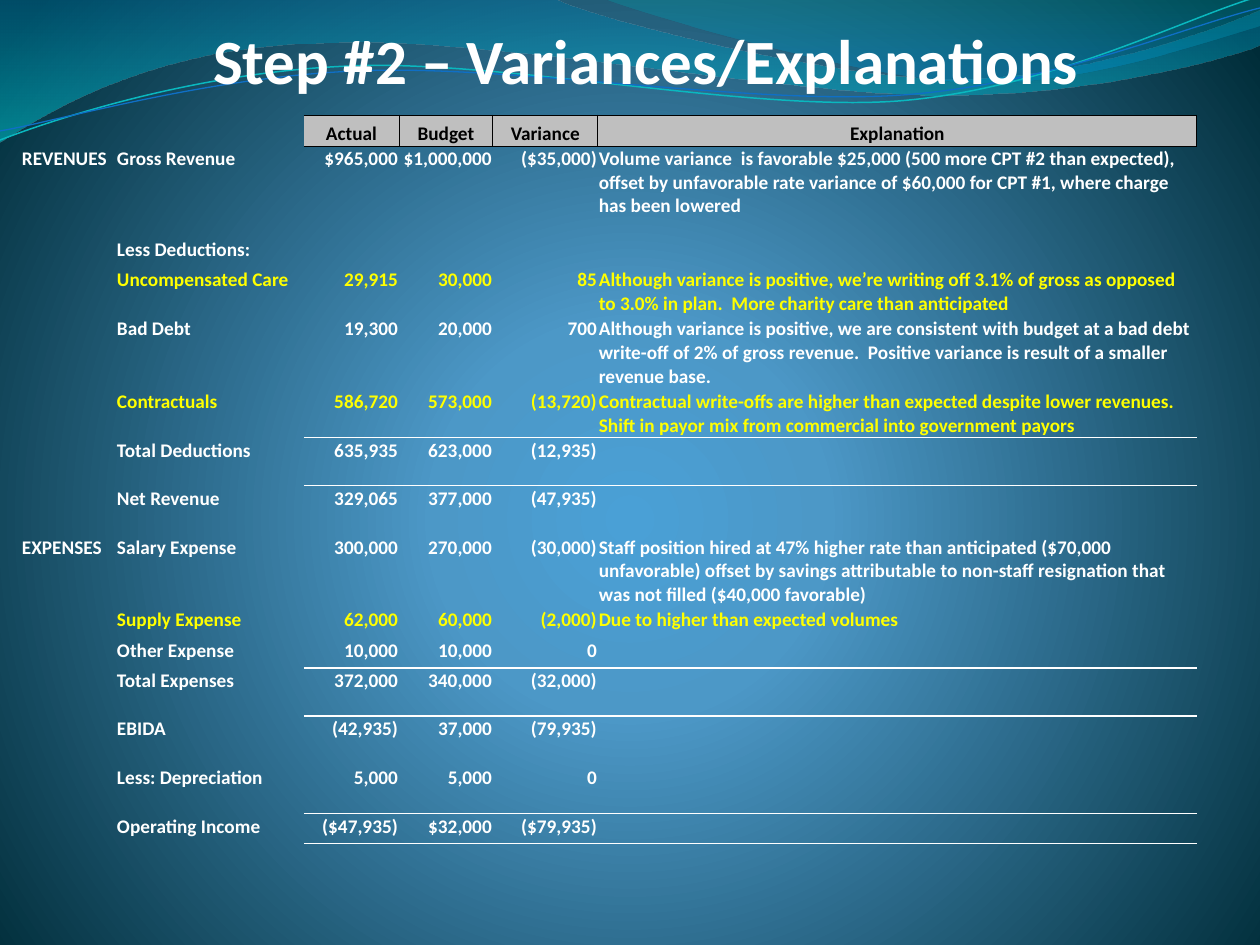
import lxml.etree
import pptx
import pptx.dml.color
import pptx.enum.text
import pptx.oxml
import pptx.oxml.ns
import pptx.util

RGB = pptx.dml.color.RGBColor
ALIGN = pptx.enum.text.PP_ALIGN
ANCHOR = pptx.enum.text.MSO_ANCHOR
qn = pptx.oxml.ns.qn

WHITE = RGB(0xFF, 0xFF, 0xFF)
BLACK = RGB(0x00, 0x00, 0x00)
YELLOW = RGB(0xFF, 0xFF, 0x00)
GREY = RGB(0xBF, 0xBF, 0xBF)
AQUA = RGB(0x0A, 0xB8, 0xBF)
BLUE = RGB(0x0F, 0x6F, 0xC6)

FONT = "Calibri"
SCALE = 914400 / 126  # EMU per px
NO_GRID_STYLE = "{2D5ABB26-0587-4C30-8999-92F81FD0307C}"

DOWNWARD = '<a:lin ang="5400000" scaled="0"/>'
CIRCULAR = ('<a:path path="circle"><a:fillToRect l="10000" t="110000" '
            'r="10000" b="100000"/></a:path>')

# Outlines in px: a pair is a straight step, three pairs are a curve
BROAD_WAVE = [
    (0, 0), (554, -1), ((600, 21), (837, 79), (955, 79)),
    ((1075, 79), (1207, 33), (1260, 11)), (1261, 45),
    ((1239, 55), (1096, 96), (940, 95)), ((784, 95), (481, 35), (324, 43)),
    ((163, 45), (58, 105), (-1, 142))]
RIGHT_WAVE = [
    (604, -1), ((641, 14), (859, 78), (969, 82)),
    ((1079, 87), (1211, 40), (1260, 26)), (1260, 0)]
AQUA_LINE = [
    (0, 140), ((60, 117), (199, 72), (349, 66)),
    ((498, 59), (747, 112), (898, 101)), ((1050, 89), (1182, 19), (1257, -3))]
BLUE_LINE = [
    (0, 131), ((59, 121), (207, 77), (357, 71)),
    ((508, 64), (752, 106), (903, 95)), ((1053, 84), (1186, 26), (1260, 8))]

COLUMNS = [95, 188, 95, 94, 105, 599]
SPACER = (19, WHITE, [""] * 6)
LOW_SPACER = (18, WHITE, [""] * 6)
# Height, text colour, cells
ROWS = [
    (31, BLACK, ["", "", "Actual", "Budget", "Variance", "Explanation"]),
    (72, WHITE, ["REVENUES", "Gross Revenue", "$965,000", "$1,000,000", "($35,000)",
                 "Volume variance  is favorable $25,000 (500 more CPT #2 than expected), "
                 "offset by unfavorable rate variance of $60,000 for CPT #1, where charge "
                 "has been lowered"]),
    SPACER,
    (30, WHITE, ["", "Less Deductions:", "", "", "", ""]),
    (49, YELLOW, ["", "Uncompensated Care", "29,915", "30,000", "85",
                  "Although variance is positive, we’re writing off 3.1% of gross as "
                  "opposed to 3.0% in plan.  More charity care than anticipated"]),
    (73, WHITE, ["", "Bad Debt", "19,300", "20,000", "700",
                 "Although variance is positive, we are consistent with budget at a bad "
                 "debt write-off of 2% of gross revenue.  Positive variance is result of a "
                 "smaller revenue base."]),
    (48, YELLOW, ["", "Contractuals", "586,720", "573,000", "(13,720)",
                  "Contractual write-offs are higher than expected despite lower revenues.  "
                  "Shift in payor mix from commercial into government payors"]),
    (30, WHITE, ["", "Total Deductions", "635,935", "623,000", "(12,935)", ""]),
    LOW_SPACER,
    (30, WHITE, ["", "Net Revenue", "329,065", "377,000", "(47,935)", ""]),
    SPACER,
    (72, WHITE, ["EXPENSES", "Salary Expense", "300,000", "270,000", "(30,000)",
                 "Staff position hired at 47% higher rate than anticipated ($70,000 "
                 "unfavorable) offset by savings attributable to non-staff resignation that "
                 "was not filled ($40,000 favorable)"]),
    (31, YELLOW, ["", "Supply Expense", "62,000", "60,000", "(2,000)",
                  "Due to higher than expected volumes"]),
    (30, WHITE, ["", "Other Expense", "10,000", "10,000", "0", ""]),
    (30, WHITE, ["", "Total Expenses", "372,000", "340,000", "(32,000)", ""]),
    LOW_SPACER,
    (30, WHITE, ["", "EBIDA", "(42,935)", "37,000", "(79,935)", ""]),
    SPACER,
    (30, WHITE, ["", "Less: Depreciation", "5,000", "5,000", "0", ""]),
    SPACER,
    (30, WHITE, ["", "Operating Income", "($47,935)", "$32,000", "($79,935)", ""]),
]
RULED_ROWS = {6, 8, 13, 15, 19, 20}  # rows with a white rule below


def px(length):
    return pptx.util.Emu(round(length * SCALE))


def gradient(stops, direction):
    """Gradient fill element from (position, colour, opacity) stops in percent."""
    marks = "".join(
        f'<a:gs pos="{position * 1000}"><a:srgbClr val="{colour}">'
        f'<a:alpha val="{opacity * 1000}"/></a:srgbClr></a:gs>'
        for position, colour, opacity in stops)
    return pptx.oxml.parse_xml(
        f'<a:gradFill {pptx.oxml.ns.nsdecls("a")} rotWithShape="1">'
        f'<a:gsLst>{marks}</a:gsLst>{direction}</a:gradFill>')


def replace_solid(fill, parent, stops, direction):
    fill.solid()
    parent.replace(parent.find(qn("a:solidFill")), gradient(stops, direction))


def add_outline(page, outline, closed):
    """Freeform through the end of each step, with curved steps bent afterwards."""
    ends = [part[-1] if isinstance(part[0], tuple) else part for part in outline]
    start, *others = [(px(x), px(y)) for x, y in ends]
    builder = page.shapes.build_freeform(*start)
    builder.add_line_segments(others, close=closed)
    shape = builder.convert_to_shape()
    shape.shadow.inherit = False
    segments = list(shape.element.iter(qn("a:lnTo")))
    for segment, part in zip(segments, outline[1:]):
        if isinstance(part[0], tuple):
            curve = lxml.etree.Element(qn("a:cubicBezTo"))
            for x, y in part:
                lxml.etree.SubElement(curve, qn("a:pt"), x=str(px(x) - shape.left),
                                      y=str(px(y) - shape.top))
            segment.getparent().replace(segment, curve)
    return shape


def add_wave(page, outline, stops):
    shape = add_outline(page, outline, True)
    shape.line.fill.background()
    replace_solid(shape.fill, shape.element.spPr, stops, DOWNWARD)


def add_swoosh(page, outline, colour, width):
    shape = add_outline(page, outline, False)
    shape.fill.background()
    shape.line.color.rgb = colour
    shape.line.width = pptx.util.Pt(width)


def write(frame, text, size=11, colour=WHITE, align=ALIGN.LEFT):
    para = frame.paragraphs[0]
    para.alignment = align
    span = para.add_run()
    span.text = text
    span.font.name, span.font.size, span.font.bold = FONT, pptx.util.Pt(size), True
    span.font.color.rgb = colour


def add_title(page, text):
    title = page.shapes.title
    title.left, title.top, title.width, title.height = map(px, (-144, -32, 1582, 129))
    frame = title.text_frame
    frame.auto_size = pptx.enum.text.MSO_AUTO_SIZE.NONE
    frame.vertical_anchor = ANCHOR.BOTTOM
    frame.margin_left = frame.margin_top = frame.margin_bottom = 0
    frame.margin_right = px(2)
    write(frame, text, size=36, align=ALIGN.CENTER)
    title.element.getparent().append(title.element)  # in front of the waves


def add_border(cell, side, rule):
    properties = cell._tc.get_or_add_tcPr()
    line = lxml.etree.SubElement(properties, qn(f"a:ln{side}"))
    if rule is None:
        lxml.etree.SubElement(line, qn("a:noFill"))
        return
    colour, width = rule
    line.set("w", str(pptx.util.Pt(width)))
    solid = lxml.etree.SubElement(line, qn("a:solidFill"))
    lxml.etree.SubElement(solid, qn("a:srgbClr"), val=str(colour))


def rule_cell(cell, row, column):
    """Black frame round the header, white rules under the ruled rows."""
    frame, rule = (BLACK, 0.5), (WHITE, 1)
    rules = {}
    if column >= 2:
        if row == 0:
            rules = dict.fromkeys("RTB" if column == 2 else "LRTB", frame)
        if row == 1:
            rules["T"] = frame
        if row - 1 in RULED_ROWS:
            rules["T"] = rule
        if row in RULED_ROWS:
            rules["B"] = rule
    for side in "LRTB":
        add_border(cell, side, rules.get(side))


def fill_cell(cell, text, row, column, colour):
    cell.margin_left = cell.margin_right = cell.margin_top = px(1)
    cell.margin_bottom = 0
    cell.vertical_anchor = ANCHOR.TOP if row else ANCHOR.BOTTOM
    rule_cell(cell, row, column)
    if row == 0 and column >= 2:
        cell.fill.solid()
        cell.fill.fore_color.rgb = GREY
    else:
        cell.fill.background()
    if text:
        align = ALIGN.RIGHT if column in (2, 3, 4) else ALIGN.LEFT
        write(cell.text_frame, text, colour=colour, align=align if row else ALIGN.CENTER)
    else:  # small type keeps the spacer rows low
        lxml.etree.SubElement(cell.text_frame.paragraphs[0]._p, qn("a:endParaRPr"), sz="600")


def add_variance_table(page):
    heights = [height for height, _, _ in ROWS]
    frame = page.shapes.add_table(len(ROWS), len(COLUMNS), px(21), px(115),
                                  px(sum(COLUMNS)), px(sum(heights)))
    table = frame.table
    table.first_row = table.horz_banding = False
    table._tbl.tblPr.find(qn("a:tableStyleId")).text = NO_GRID_STYLE
    for column, width in zip(table.columns, COLUMNS):
        column.width = px(width)
    for row, (height, colour, texts) in enumerate(ROWS):
        table.rows[row].height = px(height)
        for column, text in enumerate(texts):
            fill_cell(table.cell(row, column), text, row, column, colour)


def main():
    deck = pptx.Presentation()
    deck.slide_width, deck.slide_height = px(1260), px(945)
    page = deck.slides.add_slide(deck.slide_layouts[0])
    subtitle = page.placeholders[1].element
    subtitle.getparent().remove(subtitle)

    # Background and waves
    replace_solid(page.background.fill, page.element.find(f".//{qn('p:bgPr')}"),
                  [(0, "4AA0D6", 100), (25, "4C98C7", 100), (100, "002C38", 100)], CIRCULAR)
    add_wave(page, BROAD_WAVE, [(0, "0074A1", 45), (100, "00C6CF", 55)])
    add_wave(page, RIGHT_WAVE, [(0, "00A1A9", 30), (80, "008BBF", 45)])
    add_swoosh(page, AQUA_LINE, AQUA, 0.85)
    add_swoosh(page, BLUE_LINE, BLUE, 0.75)

    # Content
    add_title(page, "Step #2 – Variances/Explanations")
    add_variance_table(page)
    deck.save("out.pptx")


if __name__ == "__main__":
    main()
